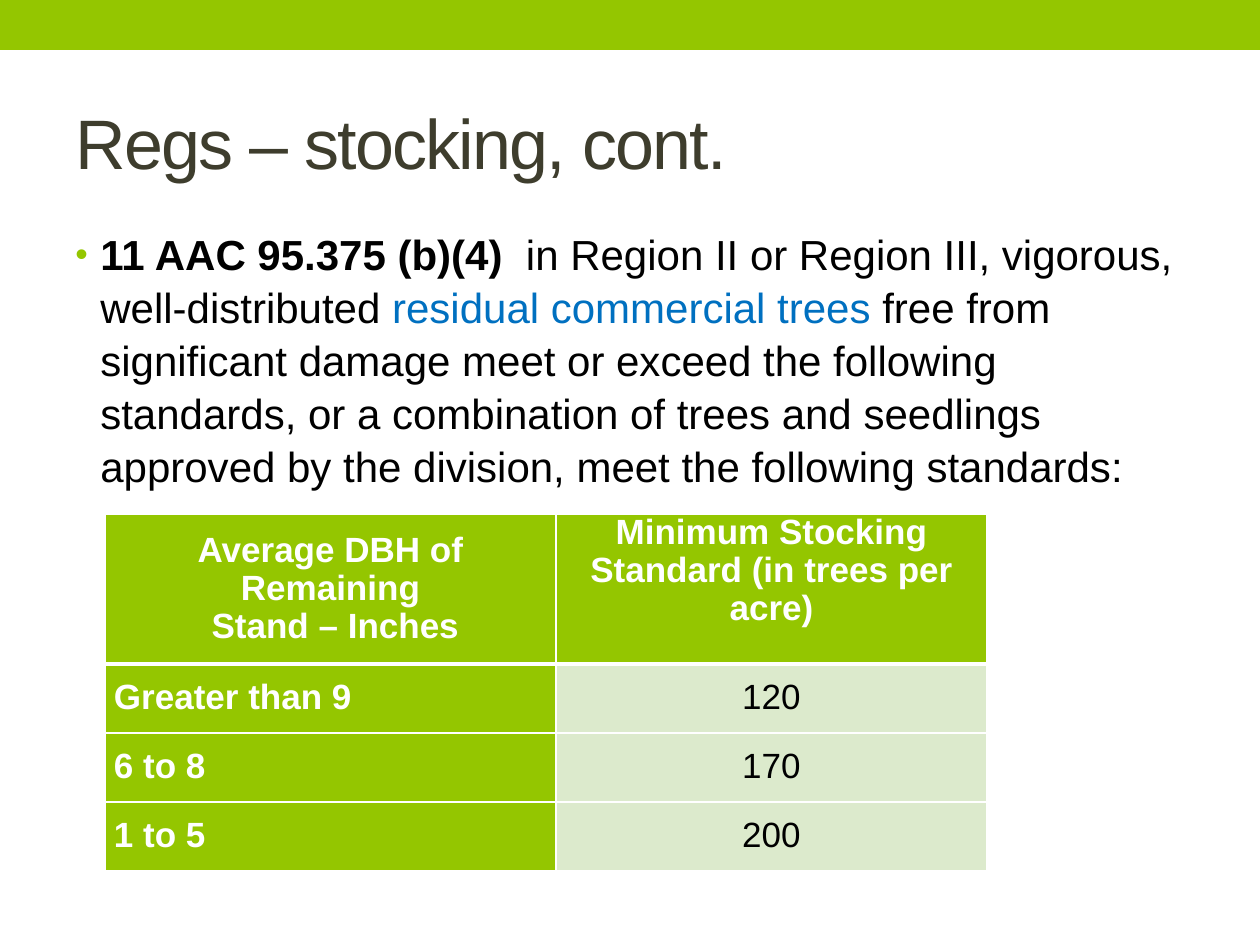
from lxml.etree import SubElement
from pptx import Presentation
from pptx.dml.color import RGBColor
from pptx.enum.shapes import MSO_SHAPE
from pptx.enum.text import MSO_ANCHOR as ANCHOR, PP_ALIGN as ALIGN
from pptx.oxml.ns import qn
from pptx.util import Emu, Pt

FONT = "Arial"
COLORS = {"green": "94C600", "pale": "DCEACC", "title": "3E3D2D",
          "link": "0070C0", "black": "000000", "white": "FFFFFF"}

TITLE = "Regs – stocking, cont."
RULE = [  # text, colour, bold
    ("11 AAC 95.375 (b)(4)  ", "black", True),
    ("in Region II or Region III, vigorous, well-distributed ", "black", False),
    ("residual commercial trees ", "link", False),
    ("free from significant damage meet or exceed the following standards, "
     "or a combination of trees and seedlings approved by the division, "
     "meet the following standards:", "black", False),
]
STOCKING = [
    ("Average DBH of Remaining\n Stand – Inches",
     "Minimum Stocking\nStandard (in trees per acre)"),
    ("Greater than 9", "120"),
    ("6 to 8", "170"),
    ("1 to 5", "200"),
]
COL_WIDTHS = (451, 431)
ROW_HEIGHTS = (150, 69, 69, 69)


def px(n):
    return Emu(n * 914400 // 126)


def rgb(name):
    return RGBColor.from_string(COLORS[name])


def style(run, size, color, bold=False):
    run.font.name, run.font.size, run.font.bold = FONT, Pt(size), bold
    run.font.color.rgb = rgb(color)


def add_text_frame(slide, x, y, w, h, anchor):
    tf = slide.shapes.add_textbox(px(x), px(y), px(w), px(h)).text_frame
    tf.word_wrap, tf.vertical_anchor = True, anchor
    return tf


def add_bullet(p, indent, color, percent):
    pPr = p._p.get_or_add_pPr()
    pPr.set("marL", str(px(indent)))
    pPr.set("indent", str(-px(indent)))
    clr = SubElement(pPr, qn("a:buClr"))
    SubElement(clr, qn("a:srgbClr"), val=COLORS[color])
    SubElement(pPr, qn("a:buSzPct"), val=str(percent * 1000))
    SubElement(pPr, qn("a:buFont"), typeface=FONT)
    SubElement(pPr, qn("a:buChar"), char="•")


def set_borders(cell, widths):
    """Draw white borders; widths gives points for each side."""
    tcPr = cell._tc.get_or_add_tcPr()
    for i, (side, width) in enumerate(widths.items()):
        ln = tcPr.makeelement(qn(f"a:ln{side}"), {"w": str(Pt(width))})
        fill = SubElement(ln, qn("a:solidFill"))
        SubElement(fill, qn("a:srgbClr"), val=COLORS["white"])
        tcPr.insert(i, ln)


def fill_cell(cell, text, row, col):
    header, label = row == 0, row == 0 or col == 0
    cell.fill.solid()
    cell.fill.fore_color.rgb = rgb("green" if label else "pale")
    cell.margin_left = cell.margin_right = px(9)
    cell.margin_top = cell.margin_bottom = 0
    cell.vertical_anchor = ANCHOR.TOP if header and col else ANCHOR.MIDDLE
    cell.text_frame.text = text
    for p in cell.text_frame.paragraphs:
        p.alignment = ALIGN.CENTER if header or col else ALIGN.LEFT
        p.line_spacing = 0.97
        style(p.runs[0], 20, "white" if label else "black", label)
    set_borders(cell, {"L": 1, "R": 1, "T": 3 if row == 1 else 1,
                       "B": 3 if header else 1})


def add_stocking_table(slide, x, y):
    table = slide.shapes.add_table(
        len(STOCKING), len(COL_WIDTHS), px(x), px(y),
        px(sum(COL_WIDTHS)), px(sum(ROW_HEIGHTS))).table
    for column, width in zip(table.columns, COL_WIDTHS):
        column.width = px(width)
    for r, (texts, height) in enumerate(zip(STOCKING, ROW_HEIGHTS)):
        table.rows[r].height = px(height)
        for c, text in enumerate(texts):
            fill_cell(table.cell(r, c), text, r, c)


def main():
    prs = Presentation()
    prs.slide_width, prs.slide_height = px(1260), px(945)
    s = prs.slides.add_slide(prs.slide_layouts[6])

    band = s.shapes.add_shape(MSO_SHAPE.RECTANGLE, 0, 0, px(1260), px(50))
    band.shadow.inherit = False
    band.fill.solid()
    band.fill.fore_color.rgb = rgb("green")
    band.line.fill.background()

    tf = add_text_frame(s, 63, 73, 1134, 136, ANCHOR.MIDDLE)
    tf.text = TITLE
    title = tf.paragraphs[0].runs[0]
    style(title, 40, "title")
    title.font._element.set("spc", "-100")

    p = add_text_frame(s, 63, 220, 1134, 672, ANCHOR.TOP).paragraphs[0]
    p.line_spacing = 1.05
    add_bullet(p, 25, "green", 85)
    for text, color, bold in RULE:
        r = p.add_run()
        r.text = text
        style(r, 24, color, bold)

    add_stocking_table(s, 105, 514)
    prs.save("out.pptx")


if __name__ == "__main__":
    main()
